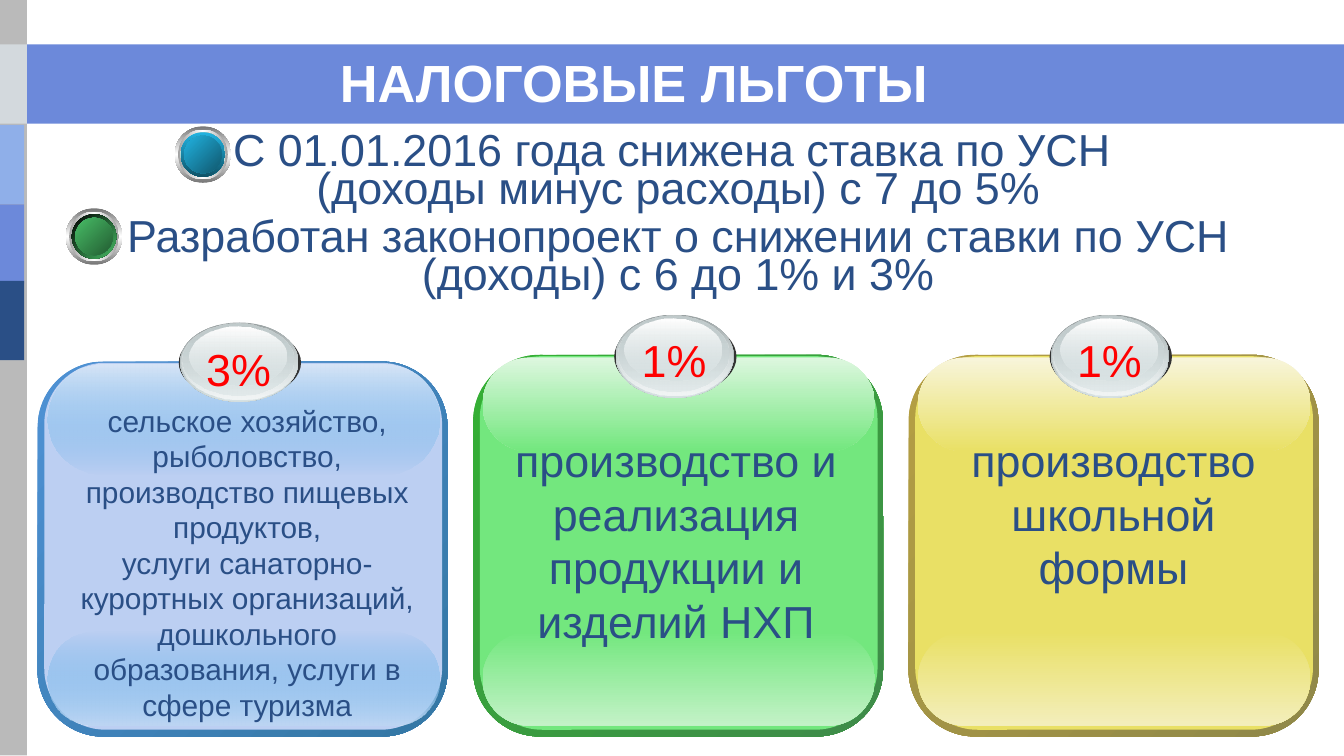
import pptx
import pptx.util
import pptx.dml.color
import pptx.enum.shapes
import pptx.enum.text
from lxml import etree
from pptx.oxml.ns import qn

Inches, Pt = pptx.util.Inches, pptx.util.Pt
MSO = pptx.enum.shapes.MSO_SHAPE
TXT = pptx.enum.text
NBSP = chr(160)  # non-breaking space

# ---- Theme ----
THEME = dict(font="Arial", title=28, large=24, small=16,
             white="FFFFFF", navy="2A4F86", blue="6C89DA", sky="8FAFE9",
             pale="D3D9DD", rail="BABABA", red="FF0000", dark="333333")

# ---- Content ----
TITLE = "НАЛОГОВЫЕ ЛЬГОТЫ"
# text, space after in points
INTRO = [
    ("С 01.01.2016 года снижена ставка по УСН ", 0),
    ("(доходы минус расходы) с 7 до 5%", 6),
    ("Разработан законопроект о снижении ставки по УСН (доходы) с 6 до 1% и 3%", 0),
]
# gradient stops are (position, colour[, opacity %])
CARDS = [
    dict(rate="3%", top=2.69, badge_top=2.4, badge_scale=0.95, face="BCCFF2",
         frame=[(0, "4E91D4"), (100, "3477A4")], gloss_h=0.82,
         gloss=[(0, "D7E5F7"), (100, "3CA1E6", 0)],
         glow=[(0, "3CA1E6", 0), (100, "BDD6F3")],
         text="сельское хозяйство, рыболовство, производство пищевых продуктов, "
              f"услуги{NBSP}санаторно-курортных организаций, дошкольного образования, "
              "услуги в сфере туризма",
         text_at=(0.49, 2.95, 2.7, 2.5), size=THEME["small"], spacing=19),
    dict(rate="1%", top=2.64, badge_top=2.34, badge_scale=1, face="73E77E",
         frame=[(0, "34B034"), (100, "3F8B4A")], gloss_h=0.7,
         gloss=[(0, "DDF7DF"), (100, "73E77E")],
         glow=[(0, "73E77E"), (100, "C3F2C7")],
         text="производство и реализация продукции и изделий НХП",
         text_at=(3.66, 3.17, 2.74, 1.72), size=THEME["large"], spacing=None),
    dict(rate="1%", top=2.64, badge_top=2.34, badge_scale=1, face="E9E065",
         frame=[(0, "B59F43"), (100, "8F8849")], gloss_h=0.7,
         gloss=[(0, "F8F5DB"), (100, "E9E065")],
         glow=[(0, "E9E065"), (100, "F3EEBB")],
         text="производство школьной формы",
         text_at=(6.92, 3.17, 2.73, 1.31), size=THEME["large"], spacing=None),
]
CARD_LEFT, CARD_PITCH, CARD_W, CARD_BOTTOM = 0.28, 3.24, 3.05, 5.48

# Badge layers: dx, dy, width, height, fill
BADGE = [
    (0, 0.03, 0.91, 0.57, THEME["dark"]),
    (0.01, 0, 0.88, 0.62, [(0, "99A1A2"), (100, "D6E1E2")]),
    (0.02, 0, 0.86, 0.6, [(0, "D6E1E2", 0), (100, "F2F5F5")]),
    (0.03, 0.01, 0.82, 0.56, [(0, "C1CBCC"), (100, "D6E1E2", 48)]),
    (0.08, 0.03, 0.72, 0.46, [(0, "FFFFFF"), (100, "D6E1E2", 38)]),
]
# Bullets: left, top, inner rim stops, rim angle, centre stops
BULLETS = [
    (1.3, 0.94, [(0, "21B3E1"), (100, "0F5368")], 90, [(0, "21B3E1"), (100, "10576D")]),
    (0.49, 1.55, [(0, "000000"), (100, "48BE67")], 45, [(0, "48BE67"), (100, "235C32")]),
]


def mirrored(edge, middle):
    return [(0, edge), (50, middle), (100, edge)]


def rgb(color):
    return pptx.dml.color.RGBColor.from_string(color)


def set_gradient(shape, stops, angle):
    shape.fill.gradient()
    grad = shape._element.spPr.find(qn("a:gradFill"))
    for child in list(grad):
        grad.remove(child)
    gs_list = etree.SubElement(grad, qn("a:gsLst"))
    for pos, color, *opacity in stops:
        gs = etree.SubElement(gs_list, qn("a:gs"), pos=str(pos * 1000))
        clr = etree.SubElement(gs, qn("a:srgbClr"), val=color)
        if opacity:
            etree.SubElement(clr, qn("a:alpha"), val=str(opacity[0] * 1000))
    etree.SubElement(grad, qn("a:lin"), ang=str(angle * 60000), scaled="0")


def add_shape(s, kind, x, y, w, h, fill, angle=90, adj=None):
    sp = s.shapes.add_shape(kind, Inches(x), Inches(y), Inches(w), Inches(h))
    sp.shadow.inherit = False
    sp.line.fill.background()
    if adj is not None:
        sp.adjustments[0] = adj
    if isinstance(fill, str):
        sp.fill.solid()
        sp.fill.fore_color.rgb = rgb(fill)
    else:
        set_gradient(sp, fill, angle)


def format_text(p, size, color, bold=False):
    p.alignment = TXT.PP_ALIGN.CENTER
    for r in p.runs:
        r.font.name, r.font.size, r.font.bold = THEME["font"], Pt(size), bold
        r.font.color.rgb = rgb(color)


def add_text(s, x, y, w, h, paragraphs, size, color, spacing=None, wrap=True):
    tf = s.shapes.add_textbox(Inches(x), Inches(y), Inches(w), Inches(h)).text_frame
    tf.word_wrap = wrap
    tf.auto_size = TXT.MSO_AUTO_SIZE.SHAPE_TO_FIT_TEXT
    tf.text = "\n".join(text for text, _ in paragraphs)
    for p, (_, after) in zip(tf.paragraphs, paragraphs):
        format_text(p, size, color)
        if spacing:
            p.line_spacing = Pt(spacing)
        if after:
            p.space_after = Pt(after)


def add_card(s, x, card):
    top, h = card["top"], CARD_BOTTOM - card["top"]
    box = MSO.ROUNDED_RECTANGLE
    add_shape(s, box, x, top, CARD_W, h, card["frame"], 45, 0.175)
    add_shape(s, box, x + 0.05, top + 0.01, 2.96, h - 0.06, card["face"], adj=0.167)
    add_shape(s, box, x + 0.07, CARD_BOTTOM - 0.78, 2.92, 0.7, card["glow"], adj=0.5)
    add_shape(s, box, x + 0.07, top + 0.02, 2.92, card["gloss_h"], card["gloss"], adj=0.5)
    add_text(s, *card["text_at"], [(card["text"], 0)],
             card["size"], THEME["navy"], card["spacing"])


def add_badge(s, x, card):
    y, scale = card["badge_top"], card["badge_scale"]
    for dx, dy, w, h, fill in BADGE:
        add_shape(s, MSO.OVAL, x + dx, y + dy * scale, w, h * scale, fill)
    add_text(s, x + 0.1, y + 0.09, 0.69, 0.5, [(card["rate"], 0)],
             THEME["large"], THEME["red"], wrap=False)


def add_bullet(s, x, y, rim, rim_angle, centre):
    layers = [
        (0.42, mirrored("767676", "FFFFFF"), 90),
        (0.37, mirrored("A2A2A2", "FFFFFF"), 0),
        (0.33, mirrored("FFFFFF", "57ABA3"), 45),
        (0.33, rim, rim_angle),
        (0.28, mirrored("43837D", "57ABA3"), 315),
        (0.28, centre, 45),
    ]
    for d, stops, angle in layers:
        inset = (0.42 - d) / 2
        add_shape(s, MSO.OVAL, x + inset, y + inset, d, d, stops, angle)


def main():
    prs = pptx.Presentation()
    prs.slide_width = Inches(10)
    prs.slide_height = Inches(10 * 9 / 16)
    s = prs.slides.add_slide(prs.slide_layouts[5])

    # Title band and side rail
    for x, y, w, h, color in [
        (0, 0.33, 10, 0.59, "blue"), (-0.01, 0, 0.21, 5.62, "rail"),
        (0, 0.33, 0.2, 0.59, "pale"), (-0.02, 0.93, 0.2, 0.59, "sky"),
        (-0.02, 1.52, 0.2, 0.59, "blue"), (-0.02, 2.09, 0.2, 0.59, "navy"),
    ]:
        add_shape(s, MSO.RECTANGLE, x, y, w, h, THEME[color])

    # Title, brought in front of the band
    title = s.shapes.title
    title.left, title.top = Inches(0.34), Inches(0.38)
    title.width, title.height = Inches(8.75), Inches(0.46)
    title.text_frame.text = TITLE
    title.text_frame.vertical_anchor = TXT.MSO_ANCHOR.MIDDLE
    format_text(title.text_frame.paragraphs[0], THEME["title"], THEME["white"], True)
    s.shapes._spTree.append(title._element)

    # Introduction
    add_text(s, 0.2, 0.98, 9.69, 1.31, INTRO, THEME["large"], THEME["navy"], spacing=20)
    for bullet in BULLETS:
        add_bullet(s, *bullet)

    # Cards with rate badges
    for i, card in enumerate(CARDS):
        x = CARD_LEFT + i * CARD_PITCH
        add_card(s, x, card)
        add_badge(s, x + 1.05, card)

    prs.save("out.pptx")


if __name__ == "__main__":
    main()
